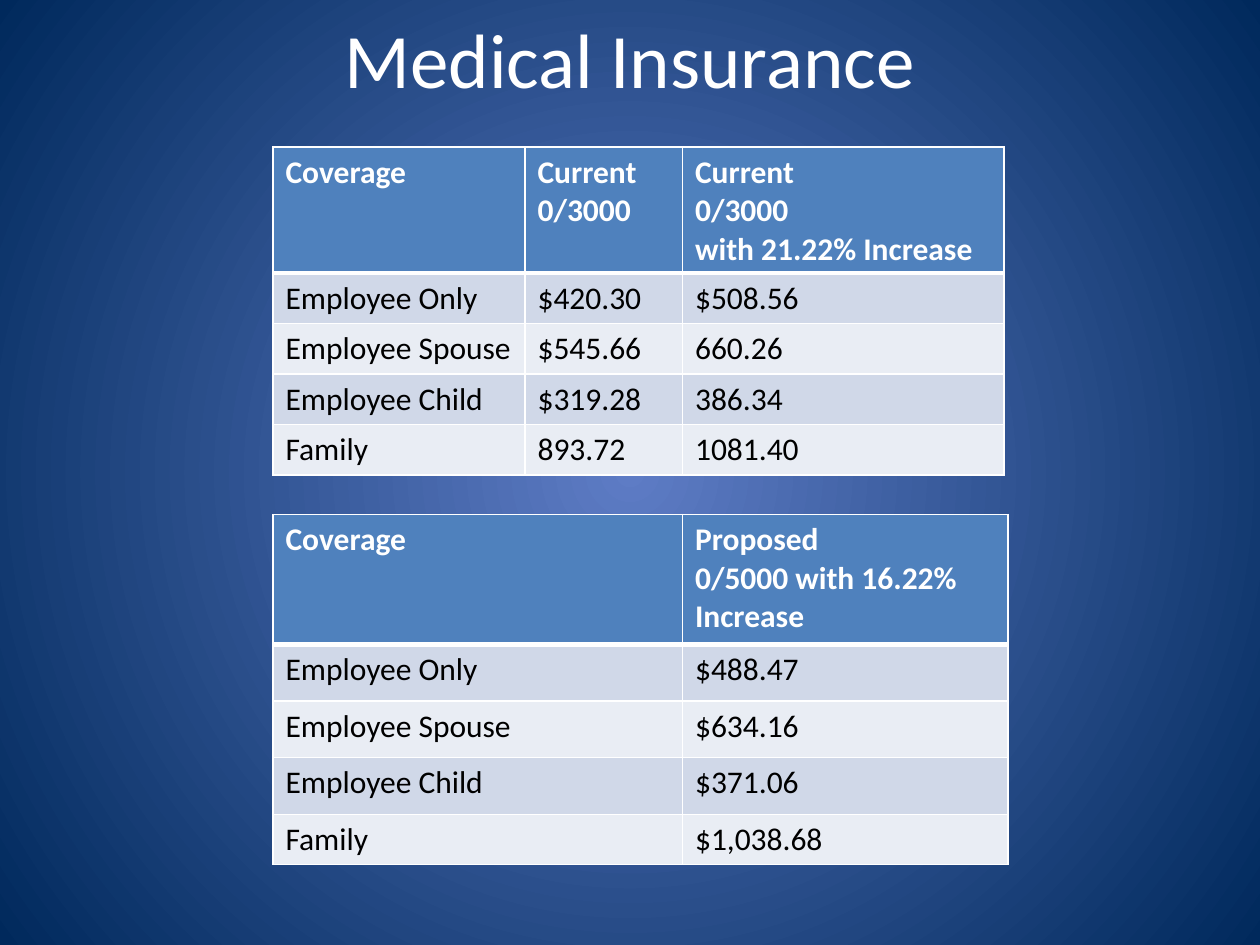
from lxml import etree
from pptx import Presentation
from pptx.dml.color import RGBColor
from pptx.enum.text import MSO_ANCHOR, PP_ALIGN
from pptx.oxml.ns import qn
from pptx.util import Inches, Pt

CENTER = PP_ALIGN.CENTER
MIDDLE = MSO_ANCHOR.MIDDLE

# The page is a grid of 120 columns by 90 rows
PAGE_COLUMNS, PAGE_ROWS = 120, 90
UNIT = Inches(10) / PAGE_COLUMNS
FONT = "Calibri"
COLORS = {
    "glow": "5E7CC5",
    "edge": "00295C",
    "header": "4F81BD",
    "odd": "D0D8E8",
    "even": "E9EDF4",
    "light": "FFFFFF",
    "dark": "000000",
}

COVERAGES = ["Employee Only", "Employee Spouse", "Employee Child", "Family"]
CURRENT_HEADERS = ["Coverage", "Current\n0/3000", "Current\n0/3000\nwith 21.22% Increase"]
CURRENT_RATES = ["$420.30", "$545.66", "$319.28", "893.72"]
INCREASED_RATES = ["$508.56", "660.26", "386.34", "1081.40"]
PROPOSED_HEADERS = ["Coverage", "Proposed\n0/5000 with 16.22%\nIncrease"]
PROPOSED_RATES = ["$488.47", "$634.16", "$371.06", "$1,038.68"]


def units(count):
    return round(count * UNIT)


def color(name):
    return RGBColor.from_string(COLORS[name])


def style_paragraph(para, size, color_name, bold=False):
    para.font.name = FONT
    para.font.size = Pt(size)
    para.font.bold = bold
    para.font.color.rgb = color(color_name)


def paint_background(page):
    fill = page.background.fill
    fill.gradient()
    for stop, position, name in zip(fill.gradient_stops, (0, 1), ("glow", "edge")):
        stop.position = position
        stop.color.rgb = color(name)
    # Turn the linear gradient into one that spreads from the centre
    gradient = page.element.find(".//" + qn("a:gradFill"))
    gradient.remove(gradient.find(qn("a:lin")))
    spread = etree.SubElement(gradient, qn("a:path"), path="circle")
    sides = dict.fromkeys("ltrb", "50000")
    etree.SubElement(spread, qn("a:fillToRect"), sides)


def add_title(page, box, text):
    frame = page.shapes.add_textbox(*map(units, box)).text_frame
    frame.word_wrap = True
    frame.vertical_anchor = MIDDLE
    para = frame.paragraphs[0]
    para.text = text
    para.alignment = CENTER
    style_paragraph(para, 44, "light")


def add_borders(cell, row):
    widths = {"L": 1, "R": 1, "T": 3 if row == 1 else 1, "B": 3 if row == 0 else 1}
    properties = cell._tc.get_or_add_tcPr()
    for side, width in widths.items():
        line = etree.SubElement(properties, qn("a:ln" + side), w=str(Pt(width)))
        paint = etree.SubElement(line, qn("a:solidFill"))
        etree.SubElement(paint, qn("a:srgbClr"), val=COLORS["light"])


def add_rate_table(page, left, top, widths, heights, headers, *rates):
    records = [headers, *zip(COVERAGES, *rates)]
    box = (left, top, sum(widths), sum(heights))
    table = page.shapes.add_table(len(heights), len(widths), *map(units, box)).table
    for column, width in zip(table.columns, widths):
        column.width = units(width)
    for row, (height, record) in enumerate(zip(heights, records)):
        table.rows[row].height = units(height)
        is_header = row == 0
        fill_name = "header" if is_header else ("even", "odd")[row % 2]
        for column, text in enumerate(record):
            cell = table.cell(row, column)
            add_borders(cell, row)
            cell.fill.solid()
            cell.fill.fore_color.rgb = color(fill_name)
            cell.text = text
            for para in cell.text_frame.paragraphs:
                style_paragraph(para, 18, "light" if is_header else "dark", is_header)


def main():
    deck = Presentation()
    deck.slide_width = units(PAGE_COLUMNS)
    deck.slide_height = units(PAGE_ROWS)
    page = deck.slides.add_slide(deck.slide_layouts[6])
    paint_background(page)
    add_title(page, (6, 0, 108, 11), "Medical Insurance")

    # Current plan, before and after the increase
    add_rate_table(page, 26, 14, [24, 15, 30.6], [11.25] + [4.5] * 4,
                   CURRENT_HEADERS, CURRENT_RATES, INCREASED_RATES)
    # Proposed plan
    add_rate_table(page, 26, 49, [39, 31], [12.35] + [5.4] * 3 + [3.1],
                   PROPOSED_HEADERS, PROPOSED_RATES)
    deck.save("out.pptx")


if __name__ == "__main__":
    main()
